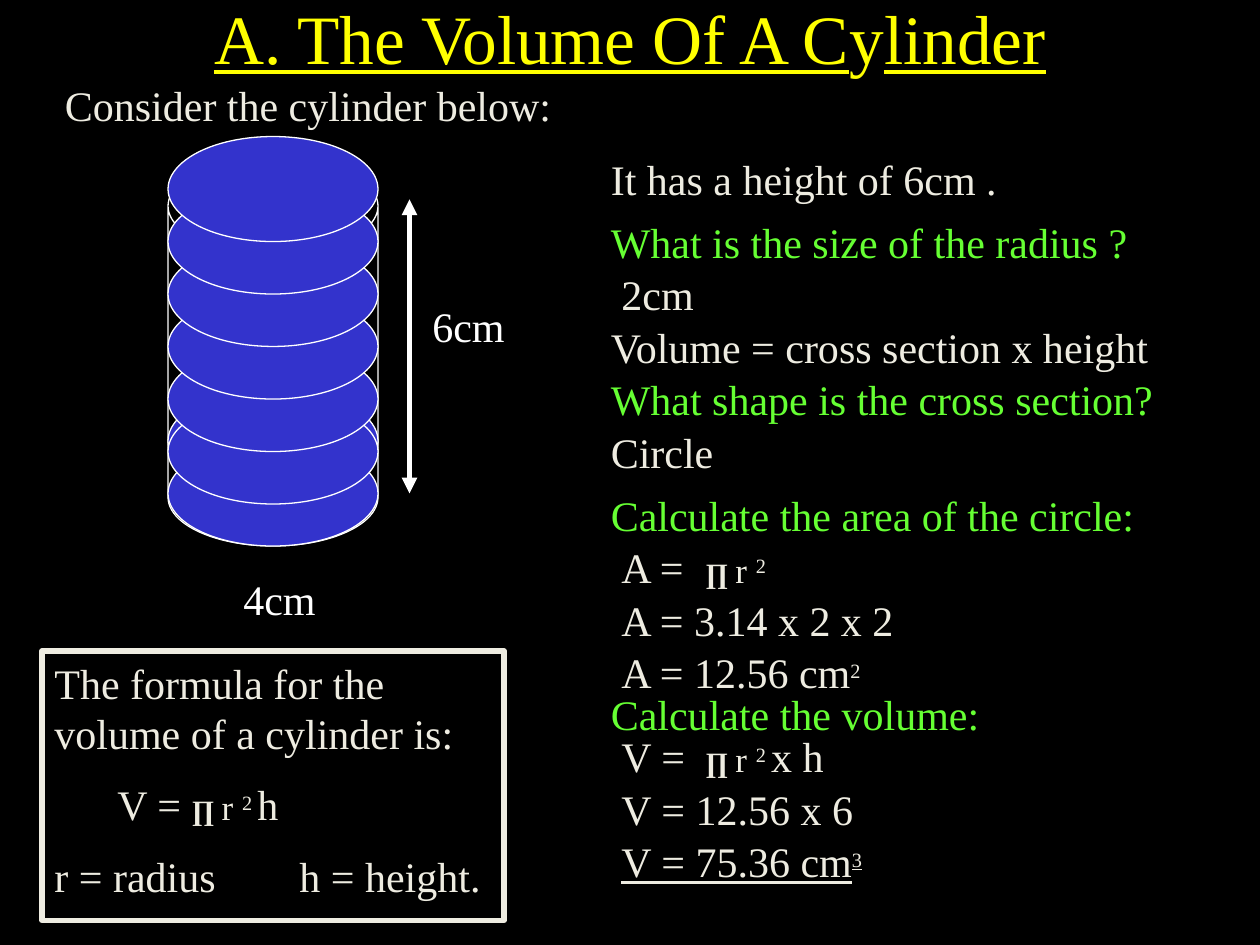
from lxml.etree import SubElement
from pptx import Presentation
from pptx.dml.color import RGBColor
from pptx.enum.shapes import MSO_CONNECTOR, MSO_SHAPE
from pptx.enum.text import MSO_ANCHOR, MSO_AUTO_SIZE, PP_ALIGN
from pptx.oxml.ns import qn
from pptx.util import Pt

FONT = "Times New Roman"
CREAM, WHITE, GREEN, YELLOW, BLUE = "EEECE1", "FFFFFF", "66FF33", "FFFF00", "3333CC"
PI = ("∏ ", {"size": 16, "bold": True})
RADIUS = ("r ", {"size": 20})
SQUARED = ("2 ", {"size": 20, "raised": True})


def color(hex_code):
    return RGBColor.from_string(hex_code)


def add_run(paragraph, text, size=24, fill=CREAM, bold=False, underline=False, raised=False):
    run = paragraph.add_run()
    run.text = text
    font = run.font
    font.name, font.size, font.bold, font.underline = FONT, Pt(size), bold, underline
    font.color.rgb = color(fill)
    if raised:
        run._r.get_or_add_rPr().set("baseline", "30000")


def set_tab(paragraph, position):
    tabs = SubElement(paragraph._p.get_or_add_pPr(), qn("a:tabLst"))
    SubElement(tabs, qn("a:tab"), pos=str(Pt(position)), algn="l")


def write(frame, paragraphs, align=PP_ALIGN.LEFT, anchor=MSO_ANCHOR.TOP, tab=None, grow=True, **style):
    """Fill a frame; a paragraph is a list of strings or (string, overrides) pairs."""
    frame.word_wrap = True
    frame.vertical_anchor = anchor
    frame.auto_size = MSO_AUTO_SIZE.SHAPE_TO_FIT_TEXT if grow else MSO_AUTO_SIZE.NONE
    for index, runs in enumerate(paragraphs):
        paragraph = frame.add_paragraph() if index else frame.paragraphs[0]
        paragraph.alignment = align
        if index:
            paragraph.space_before = Pt(12)
        if tab:
            set_tab(paragraph, tab[index])
        for piece in runs:
            text, overrides = (piece, {}) if isinstance(piece, str) else piece
            add_run(paragraph, text, **{**style, **overrides})


def add_text(slide, left, top, width, runs, height=36, **style):
    box = slide.shapes.add_textbox(Pt(left), Pt(top), Pt(width), Pt(height))
    write(box.text_frame, [runs], **style)


def add_outlined(slide, kind, left, top, width, height, line, weight, fill=None):
    shape = slide.shapes.add_shape(kind, Pt(left), Pt(top), Pt(width), Pt(height))
    shape.shadow.inherit = False
    shape.line.color.rgb = color(line)
    shape.line.width = Pt(weight)
    if fill:
        shape.fill.solid()
        shape.fill.fore_color.rgb = color(fill)
    else:
        shape.fill.background()
    return shape


def add_double_arrow(slide, x1, y1, x2, y2):
    arrow = slide.shapes.add_connector(MSO_CONNECTOR.STRAIGHT, Pt(x1), Pt(y1), Pt(x2), Pt(y2))
    arrow.line.color.rgb = color(WHITE)
    arrow.line.width = Pt(3)
    line = arrow.line._get_or_add_ln()
    for end in ("a:headEnd", "a:tailEnd"):
        SubElement(line, qn(end), type="triangle")
    SubElement(arrow._element.spPr, qn("a:effectLst"))


def draw_cylinder(slide):
    can = add_outlined(slide, MSO_SHAPE.CAN, 96, 90, 120, 222, WHITE, 0.75)
    can.adjustments[0] = 0.463
    add_double_arrow(slide, 234, 114, 234, 282)
    for top in (252, 222, *range(228, 77, -30)):
        add_outlined(slide, MSO_SHAPE.OVAL, 96, top, 120, 60, WHITE, 0.75, BLUE)
    add_text(slide, 132, 324, 72, ["4cm"], fill=WHITE)
    add_text(slide, 240, 168, 66, ["6cm"], fill=WHITE)


def write_working(slide):
    """Questions in green and statements at the margin, answers slightly indented."""
    margin, indented = 342, 348
    steps = [
        (margin, 84, 258, ["It has a height of 6cm ."], {}),
        (margin, 120, 330, ["What is the size of the radius ?"], {"fill": GREEN}),
        (indented, 150, 60, ["2cm"], {}),
        (margin, 180, 342, ["Volume = cross section x height"], {}),
        (margin, 210, 330, ["What shape is the cross section?"], {"fill": GREEN}),
        (margin, 240, 102, ["Circle"], {}),
        (margin, 276, 318, ["Calculate the area of the circle:"], {"fill": GREEN}),
        (indented, 306, 108, ["A =\t", PI, RADIUS, ("2", SQUARED[1])], {"tab": [48]}),
        (indented, 336, 192, ["A = 3.14 x 2 x 2"], {}),
        (indented, 366, 156, ["A = 12.56 cm", ("2", SQUARED[1])], {}),
        (margin, 390, 312, ["Calculate the volume:"], {"fill": GREEN}),
        (indented, 414, 162, ["V =\t", PI, RADIUS, SQUARED, "x h"], {"tab": [48]}),
        (indented, 444, 162, ["V = 12.56 x 6"], {}),
        (indented, 474, 174, ["V = 75.36 cm", ("3", SQUARED[1])], {"underline": True}),
    ]
    for left, top, width, runs, style in steps:
        add_text(slide, left, top, width, runs, **style)


def add_formula_box(slide):
    box = add_outlined(slide, MSO_SHAPE.RECTANGLE, 24, 372, 264, 154, CREAM, 3)
    write(box.text_frame, [
        ["The formula for the volume of a cylinder is:"],
        ["\tV = ", PI, RADIUS, SQUARED, "h"],
        ["r = radius\th = height."],
    ], tab=[36, 36, 140])


def main():
    deck = Presentation()
    deck.slide_width, deck.slide_height = Pt(720), Pt(540)
    slide = deck.slides.add_slide(deck.slide_layouts[6])
    slide.background.fill.solid()
    slide.background.fill.fore_color.rgb = color("000000")

    add_text(slide, 54, 0, 612, ["A. The Volume Of A C", ("y", {"underline": False}), "linder"],
             height=42, size=39.6, fill=YELLOW, underline=True, grow=False,
             align=PP_ALIGN.CENTER, anchor=MSO_ANCHOR.MIDDLE)
    add_text(slide, 30, 42, 300, ["Consider the cylinder below:"])
    draw_cylinder(slide)
    write_working(slide)
    add_formula_box(slide)
    deck.save("out.pptx")


if __name__ == "__main__":
    main()
